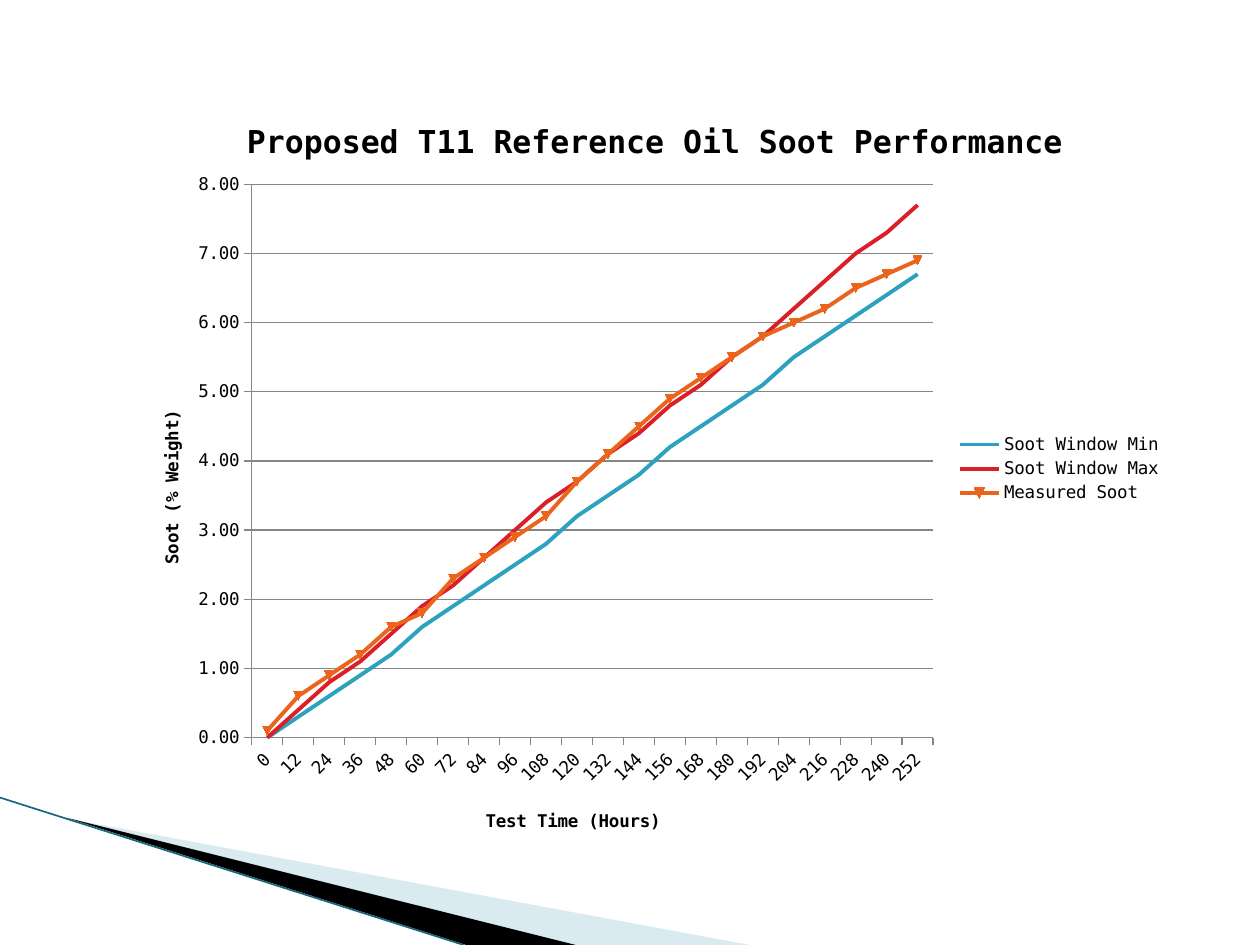
import pptx
import pptx.chart.data
import pptx.dml.color
import pptx.enum.chart
import pptx.enum.shapes
import pptx.oxml
import pptx.oxml.ns
import pptx.util

RGBColor = pptx.dml.color.RGBColor
BLACK = RGBColor(0x00, 0x00, 0x00)
GRAY = RGBColor(0x86, 0x86, 0x86)
PALE_BLUE = RGBColor(0xA0, 0xCB, 0xDC)
DARK_TEAL = RGBColor(0x16, 0x69, 0x7A)
TEAL = RGBColor(0x2D, 0xA2, 0xBF)
RED = RGBColor(0xDA, 0x1F, 0x28)
ORANGE = RGBColor(0xEB, 0x64, 0x1B)

COLUMNS, ROWS = 10, 7.5  # one grid unit is one inch
BODY_FONT = {"name": "DejaVu Sans Mono", "size": pptx.util.Pt(10), "bold": False}
AXIS_TITLE_FONT = {**BODY_FONT, "bold": True}
TITLE_FONT = {**AXIS_TITLE_FONT, "size": pptx.util.Pt(18)}

HOURS = [str(hour) for hour in range(0, 253, 12)]
SERIES = [
    ("Soot Window Min", TEAL,
     [0, 0.3, 0.6, 0.9, 1.2, 1.6, 1.9, 2.2, 2.5, 2.8, 3.2,
      3.5, 3.8, 4.2, 4.5, 4.8, 5.1, 5.5, 5.8, 6.1, 6.4, 6.7]),
    ("Soot Window Max", RED,
     [0, 0.4, 0.8, 1.1, 1.5, 1.9, 2.2, 2.6, 3, 3.4, 3.7,
      4.1, 4.4, 4.8, 5.1, 5.5, 5.8, 6.2, 6.6, 7, 7.3, 7.7]),
    ("Measured Soot", ORANGE,
     [0.1, 0.6, 0.9, 1.2, 1.6, 1.8, 2.3, 2.6, 2.9, 3.2, 3.7,
      4.1, 4.5, 4.9, 5.2, 5.5, 5.8, 6, 6.2, 6.5, 6.7, 6.9]),
]


def set_attributes(target, values):
    for name, value in values.items():
        setattr(target, name, value)


def set_font(font, values, color=BLACK):
    set_attributes(font, values)
    font.color.rgb = color


def set_line(line, color, width):
    line.color.rgb = color
    line.width = pptx.util.Pt(width)


def set_title(owner, text, font):
    title = owner.chart_title if hasattr(owner, "chart_title") else owner.axis_title
    title.text_frame.text = text
    set_font(title.text_frame.paragraphs[0].runs[0].font, font)
    return title._element


def place(element, after, **shares):
    """Fix a chart part at shares of the chart's size."""
    qn = pptx.oxml.ns.qn
    for old in element.findall(qn("c:layout")):
        element.remove(old)
    target = '<c:layoutTarget val="inner"/>' if after is None else ""
    modes = "".join(f'<c:{axis}Mode val="edge"/>' for axis in "xy")
    sizes = "".join(f'<c:{key} val="{share}"/>' for key, share in shares.items())
    layout = pptx.oxml.parse_xml(
        f'<c:layout {pptx.oxml.ns.nsdecls("c")}><c:manualLayout>'
        f"{target}{modes}{sizes}</c:manualLayout></c:layout>")
    if after is None:
        element.insert(0, layout)
    else:
        element.find(qn(after)).addnext(layout)


class SlideBuilder:
    def __init__(self, presentation):
        self.presentation = presentation
        self.slide = presentation.slides.add_slide(presentation.slide_layouts[6])

    def grid(self, *cells):
        """Turn column, row pairs into slide lengths."""
        units = (self.presentation.slide_width / COLUMNS,
                 self.presentation.slide_height / ROWS)
        return [round(cell * units[index % 2]) for index, cell in enumerate(cells)]

    def wedge(self, points, color, opacity=100):
        corners = [self.grid(*point) for point in points]
        builder = self.slide.shapes.build_freeform(*corners[0])
        builder.add_line_segments(corners[1:])
        shape = builder.convert_to_shape()
        shape.shadow.inherit = False
        shape.fill.solid()
        shape.fill.fore_color.rgb = color
        shape.line.fill.background()
        if opacity < 100:
            fill_color = shape._element.spPr.find(".//" + pptx.oxml.ns.qn("a:srgbClr"))
            fill_color.append(pptx.oxml.parse_xml(
                f'<a:alpha {pptx.oxml.ns.nsdecls("a")} val="{opacity * 1000}"/>'))

    def line(self, start, end, color, width):
        connector = self.slide.shapes.add_connector(
            pptx.enum.shapes.MSO_CONNECTOR.STRAIGHT, *self.grid(*start, *end))
        set_line(connector.line, color, width)
        connector._element.spPr.append(pptx.oxml.parse_xml(
            f'<a:effectLst {pptx.oxml.ns.nsdecls("a")}/>'))

    def line_chart(self, cells, title, axis_titles):
        enums = pptx.enum.chart
        data = pptx.chart.data.CategoryChartData(number_format="0.00")
        data.categories = HOURS
        for name, _, values in SERIES:
            data.add_series(name, values)
        chart = self.slide.shapes.add_chart(
            enums.XL_CHART_TYPE.LINE_MARKERS, *self.grid(*cells), data).chart
        set_font(chart.font, BODY_FONT)
        chart.plots[0].vary_by_categories = False
        plot_area = chart._chartSpace.find(".//" + pptx.oxml.ns.qn("c:plotArea"))
        place(plot_area, None, x=0.12, y=0.13, w=0.65, h=0.72)

        # Titles
        place(set_title(chart, title, TITLE_FONT), "c:tx", x=0.11, y=0.04)
        axes = (chart.category_axis, chart.value_axis)
        positions = ({"x": 0.34, "y": 0.94}, {"x": 0.03, "y": 0.42})
        for axis, text, position in zip(axes, axis_titles, positions):
            place(set_title(axis, text, AXIS_TITLE_FONT), "c:tx", **position)
            axis.major_tick_mark = enums.XL_TICK_MARK.OUTSIDE
            set_font(axis.tick_labels.font, BODY_FONT)
            set_line(axis.format.line, GRAY, 0.75)

        # Scale and slanted hour labels
        set_attributes(chart.value_axis, {
            "minimum_scale": 0, "maximum_scale": 8, "major_unit": 1,
            "has_major_gridlines": True})
        set_attributes(chart.value_axis.tick_labels, {
            "number_format": "0.00", "number_format_is_linked": False})
        set_line(chart.value_axis.major_gridlines.format.line, GRAY, 0.75)
        body = chart.category_axis._element.find(
            pptx.oxml.ns.qn("c:txPr")).find(pptx.oxml.ns.qn("a:bodyPr"))
        body.set("rot", str(-45 * 60000))

        # Series: only the measured one has markers
        for series, (name, color, _) in zip(chart.plots[0].series, SERIES):
            series.smooth = False
            set_line(series.format.line, color, 2.25)
            if name == "Measured Soot":
                series.marker.size = 5
                series.marker.format.fill.solid()
                series.marker.format.fill.fore_color.rgb = color
                set_line(series.marker.format.line, color, 0.75)
            else:
                series.marker.style = enums.XL_MARKER_STYLE.NONE

        # Legend
        chart.has_legend = True
        set_attributes(chart.legend, {
            "position": enums.XL_LEGEND_POSITION.RIGHT, "include_in_layout": False})
        set_font(chart.legend.font, BODY_FONT)
        place(chart.legend._element, "c:legendPos", x=0.79, y=0.45, w=0.2, h=0.1)


def main():
    presentation = pptx.Presentation()
    presentation.slide_width = pptx.util.Inches(COLUMNS)
    presentation.slide_height = pptx.util.Inches(ROWS)
    builder = SlideBuilder(presentation)

    # Corner decoration
    builder.wedge([(0.55, 6.5), (5.95, 7.5), (4.56, 7.5)], PALE_BLUE, opacity=40)
    builder.wedge([(0.53, 6.49), (4.57, 7.5), (3.7, 7.5)], BLACK)
    builder.line((0, 6.33), (3.68, 7.5), DARK_TEAL, 0.95)

    # Soot chart
    builder.line_chart((1, 0.67, 8.32, 6.1),
                       "Proposed T11 Reference Oil Soot Performance",
                       ("Test Time (Hours)", "Soot (% Weight)"))
    presentation.save("out.pptx")


if __name__ == "__main__":
    main()
